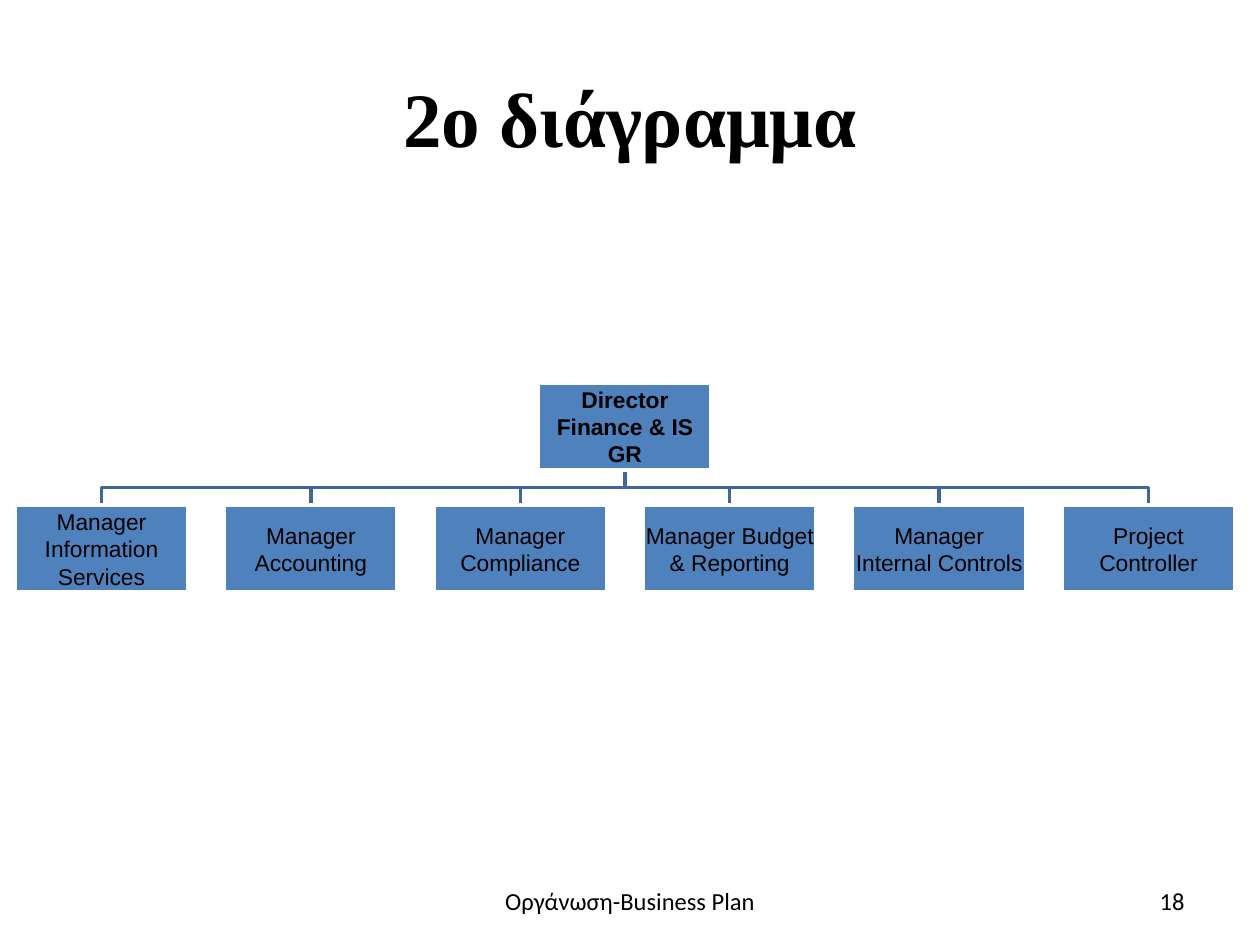
from pptx import Presentation
from pptx.dml.color import RGBColor as RGB
from pptx.enum.shapes import MSO_SHAPE as SHAPE
from pptx.enum.text import MSO_ANCHOR as ANCHOR, PP_ALIGN as ALIGN
from pptx.util import Inches, Pt

COLORS = {"box": "4F81BD", "edge": "FFFFFF", "link": "3F6797", "text": "000000"}

prs = Presentation()
prs.slide_width, prs.slide_height = Inches(10), Inches(7.5)
s = prs.slides.add_slide(prs.slide_layouts[6])


def write(sp, text, font, size, bold=False, align=ALIGN.CENTER, inset=None):
    tf = sp.text_frame
    tf.word_wrap = True
    tf.vertical_anchor = ANCHOR.MIDDLE
    if inset is not None:
        tf.margin_left = tf.margin_right = Inches(inset)
        tf.margin_top = tf.margin_bottom = Inches(inset)
    p = tf.paragraphs[0]
    p.alignment = align
    r = p.add_run()
    r.text = text
    r.font.name, r.font.size, r.font.bold = font, Pt(size), bold
    r.font.color.rgb = RGB.from_string(COLORS["text"])


def add_box(x, y, text, bold=False):
    sp = s.shapes.add_shape(SHAPE.RECTANGLE, Inches(x), Inches(y), Inches(box_w), Inches(box_h))
    sp.shadow.inherit = False
    sp.fill.solid()
    sp.fill.fore_color.rgb = RGB.from_string(COLORS["box"])
    sp.line.color.rgb = RGB.from_string(COLORS["edge"])
    sp.line.width = Pt(2)
    write(sp, text, "Arial", 13, bold, inset=0.01)


reports = [
    "Manager Information Services",
    "Manager Accounting",
    "Manager Compliance",
    "Manager Budget & Reporting",
    "Manager Internal Controls",
    "Project Controller",
]
box_w, box_h = 1.37, 0.69
left, right = 0.12, 8.43
pitch = (right - left) / (len(reports) - 1)
columns = [left + i * pitch for i in range(len(reports))]
top_x = (left + right) / 2
top_y, row_y = 3.04, 4.01
start_y = top_y + box_h
mid_y = (start_y + row_y) / 2
start_x = top_x + box_w / 2

for x in reversed(columns):
    end_x = x + box_w / 2
    fb = s.shapes.build_freeform(Inches(start_x), Inches(start_y))
    bends = [(start_x, mid_y), (end_x, mid_y), (end_x, row_y)]
    fb.add_line_segments([(Inches(a), Inches(b)) for a, b in bends], close=False)
    sp = fb.convert_to_shape()
    sp.shadow.inherit = False
    sp.fill.background()
    sp.line.color.rgb = RGB.from_string(COLORS["link"])
    sp.line.width = Pt(2)

add_box(top_x, top_y, "Director Finance & IS GR", bold=True)
for x, text in zip(columns, reports):
    add_box(x, row_y, text)

labels = [
    (0.5, 0.3, 9, 1.25, "2ο διάγραμμα", "Times New Roman", 44, True, ALIGN.CENTER),
    (3.34, 6.95, 3.32, 0.4, "Οργάνωση-Business Plan", "Calibri", 14, False, ALIGN.CENTER),
    (7.17, 6.95, 2.33, 0.4, "18", "Calibri", 14, False, ALIGN.RIGHT),
]
for x, y, w, h, *style in labels:
    write(s.shapes.add_textbox(Inches(x), Inches(y), Inches(w), Inches(h)), *style)

prs.save("out.pptx")
